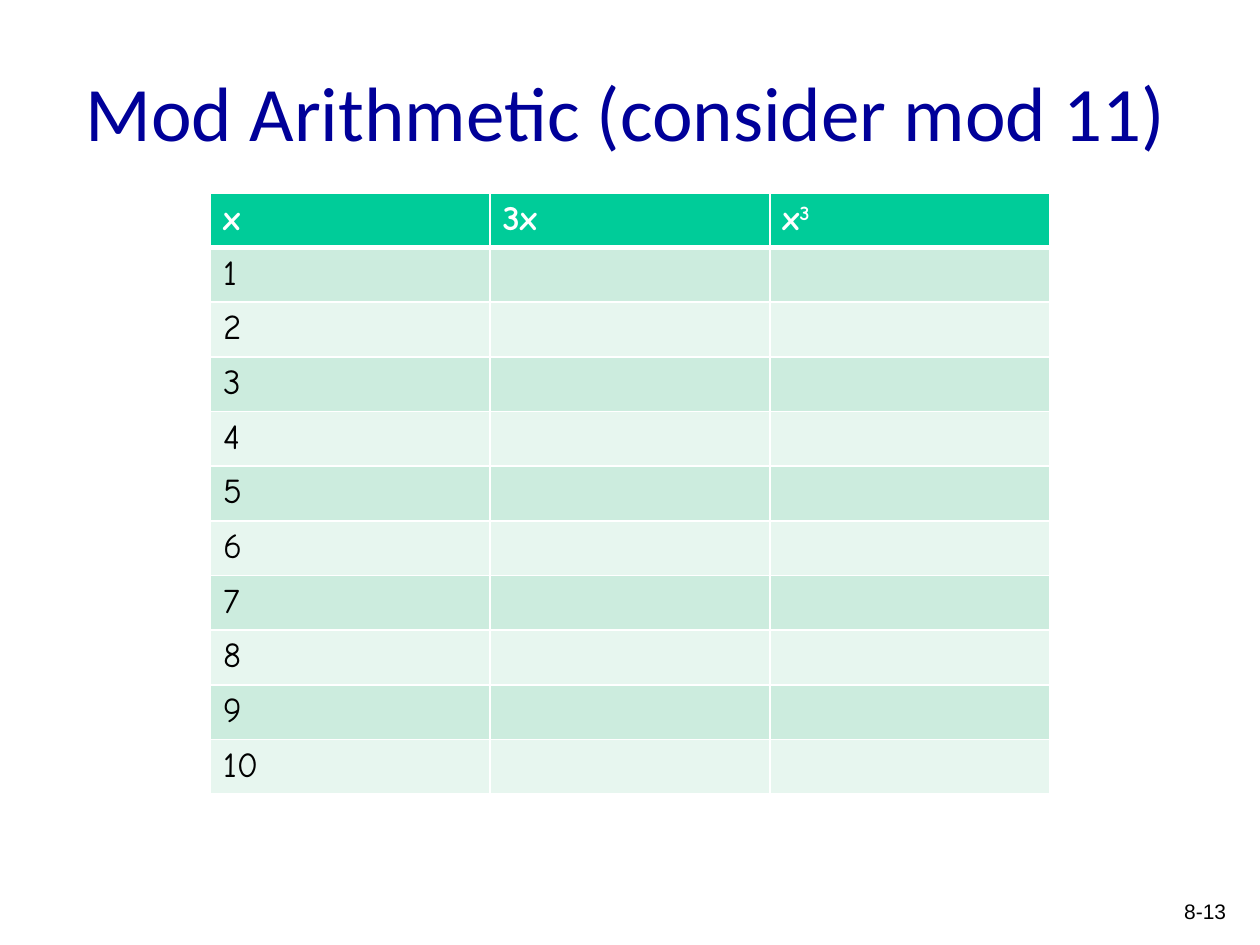
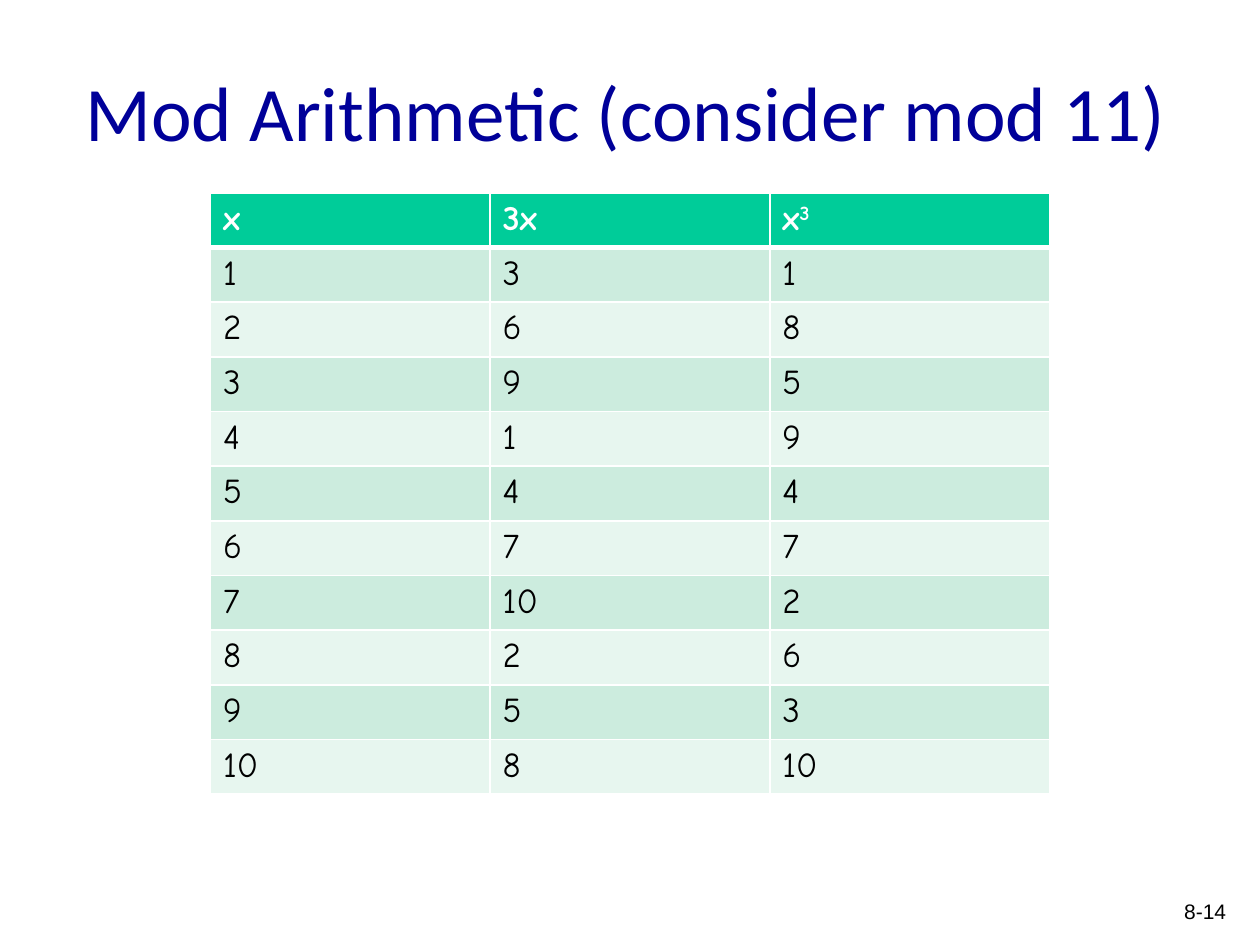
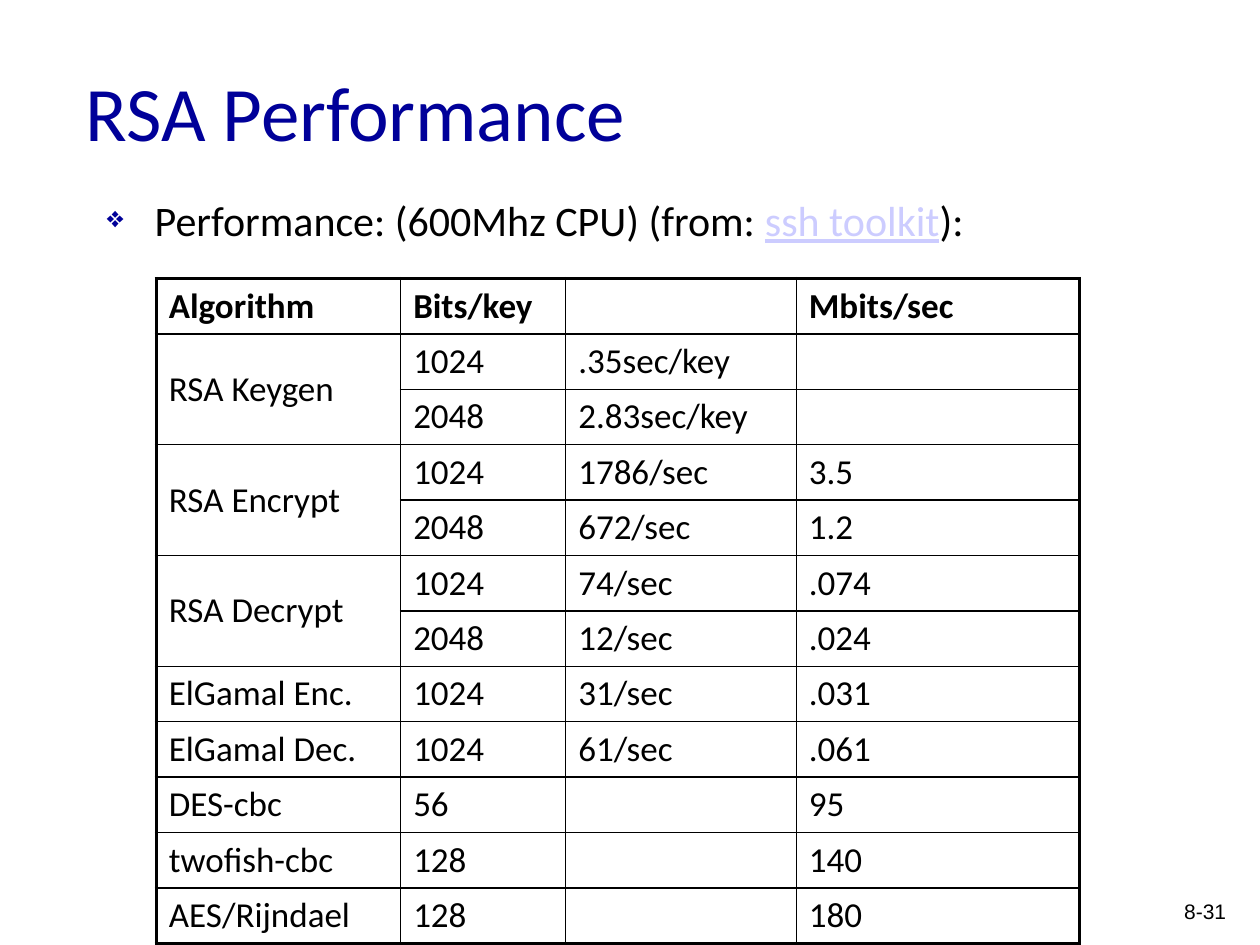
import lxml.etree
import pptx
import pptx.dml.color
import pptx.enum.text
import pptx.oxml.ns
import pptx.util

PX = 9144  # 100 px to the inch
NAVY, BLACK, WHITE = "000099", "000000", "FFFFFF"
GREEN, MINT, PALE_MINT, LILAC = "00CC99", "CCECDE", "E7F6EF", "CCCCFF"
ALIGN = pptx.enum.text.PP_ALIGN
MIDDLE = pptx.enum.text.MSO_ANCHOR.MIDDLE
qn = pptx.oxml.ns.qn


def write(frame, *texts, size, font="Calibri", color=BLACK, bold=False, align=ALIGN.LEFT):
    """Fill the first paragraph; a text may be a (text, "super" or "link") pair."""
    frame.word_wrap = True
    para = frame.paragraphs[0]
    para.alignment = align
    for text in texts:
        text, role = text if isinstance(text, tuple) else (text, "plain")
        span = para.add_run()
        span.text = text
        span.font.name = font
        span.font.size = pptx.util.Pt(size)
        span.font.bold = bold
        span.font.underline = role == "link"
        shade = LILAC if role == "link" else color
        span.font.color.rgb = pptx.dml.color.RGBColor.from_string(shade)
        if role == "super":
            span.font._element.set("baseline", "30000")
    return para


def add_grid(page, left, top, widths, row_height, row_count, color, rule_widths):
    """Add a plain table; rule_widths(row, column) gives left, right, top, bottom in points."""
    table = page.shapes.add_table(row_count, len(widths), left * PX, top * PX,
                                  sum(widths) * PX, row_height * row_count * PX).table
    table.first_row = table.horz_banding = False
    for column, width in zip(table.columns, widths):
        column.width = width * PX
    for r, row in enumerate(table.rows):
        row.height = row_height * PX
        for c, cell in enumerate(row.cells):
            properties = cell._tc.get_or_add_tcPr()
            for side, points in zip("LRTB", rule_widths(r, c)):
                line = lxml.etree.SubElement(properties, qn(f"a:ln{side}"), w=str(int(points * 12700)))
                fill = lxml.etree.SubElement(line, qn("a:solidFill"))
                lxml.etree.SubElement(fill, qn("a:srgbClr"), val=color)
            cell.fill.background()
    return table


deck = pptx.Presentation()
deck.slide_width, deck.slide_height = 1000 * PX, 750 * PX

# Titles and page numbers
for title, width, number in [("Mod Arithmetic (consider mod 11)", 901, "8-13"),
                             ("Mod Arithmetic (consider mod 11)", 901, "8-14"),
                             ("RSA Performance", 850, "8-31")]:
    page = deck.slides.add_slide(deck.slide_layouts[6])
    box = page.shapes.add_textbox(909 * PX, 708 * PX, 74 * PX, 33 * PX)
    write(box.text_frame, number, size=12, font="Arial", align=ALIGN.RIGHT)
    box = page.shapes.add_textbox(58 * PX, 25 * PX, width * PX, 125 * PX)
    box.text_frame.vertical_anchor = MIDDLE
    write(box.text_frame, title, size=44, color=NAVY)

question_page, answer_page, performance_page = deck.slides

# Mod 11 tables: first only x, then with the answers
for page, answered in [(question_page, False), (answer_page, True)]:
    table = add_grid(page, 167, 153, [222] * 3, 41, 11, WHITE,
                     lambda r, c: (1, 1, 3 if r == 1 else 1, 3 if r == 0 else 1))
    rows = [[["x"], ["3x"], ["x", ("3", "super")]]]
    for x in range(1, 11):
        answers = [[str(3 * x % 11)], [str(x ** 3 % 11)]] if answered else [[], []]
        rows.append([[str(x)]] + answers)
    for r, row in enumerate(rows):
        header = r == 0
        shade = GREEN if header else MINT if r % 2 else PALE_MINT
        for c, texts in enumerate(row):
            cell = table.cell(r, c)
            cell.fill.solid()
            cell.fill.fore_color.rgb = pptx.dml.color.RGBColor.from_string(shade)
            write(cell.text_frame, *texts, size=20, font="Comic Neue",
                  color=WHITE if header else BLACK, bold=header)

# RSA performance: bullet line
box = performance_page.shapes.add_textbox(75 * PX, 154 * PX, 850 * PX, 42 * PX)
para = write(box.text_frame, "Performance: (600Mhz CPU) (from: ", ("ssh toolkit", "link"), "):", size=24)
para.line_spacing = 0.9
bullet = para._p.get_or_add_pPr()
bullet.set("marL", str(38 * PX))
bullet.set("indent", str(-38 * PX))
bullet_color = lxml.etree.SubElement(bullet, qn("a:buClr"))
lxml.etree.SubElement(bullet_color, qn("a:srgbClr"), val=NAVY)
lxml.etree.SubElement(bullet, qn("a:buSzPct"), val="70000")
lxml.etree.SubElement(bullet, qn("a:buChar"), char="❖")

# RSA performance: speeds; None continues the cell above
speeds = [
    ("Algorithm", "Bits/key", "", "Mbits/sec"),
    ("RSA Keygen", "1024", ".35sec/key", ""),
    (None, "2048", "2.83sec/key", ""),
    ("RSA Encrypt", "1024", "1786/sec", "3.5"),
    (None, "2048", "672/sec", "1.2"),
    ("RSA Decrypt", "1024", "74/sec", ".074"),
    (None, "2048", "12/sec", ".024"),
    ("ElGamal Enc.", "1024", "31/sec", ".031"),
    ("ElGamal Dec.", "1024", "61/sec", ".061"),
    ("DES-cbc", "56", "", "95"),
    ("twofish-cbc", "128", "", "140"),
    ("AES/Rijndael", "128", "", "180"),
]
last_row = len(speeds) - 1
table = add_grid(performance_page, 124, 221, [194, 131, 183, 225], 44, len(speeds), BLACK,
                 lambda r, c: [2.25 if outer else 1 for outer in (c == 0, c == 3, r == 0, r == last_row)])
for r, row in enumerate(speeds):
    for c, text in enumerate(row):
        cell = table.cell(r, c)
        if text is None:
            table.cell(r - 1, c).merge(cell)
        elif text:
            cell.vertical_anchor = MIDDLE
            write(cell.text_frame, text, size=20, bold=r == 0)

deck.save("out.pptx")
